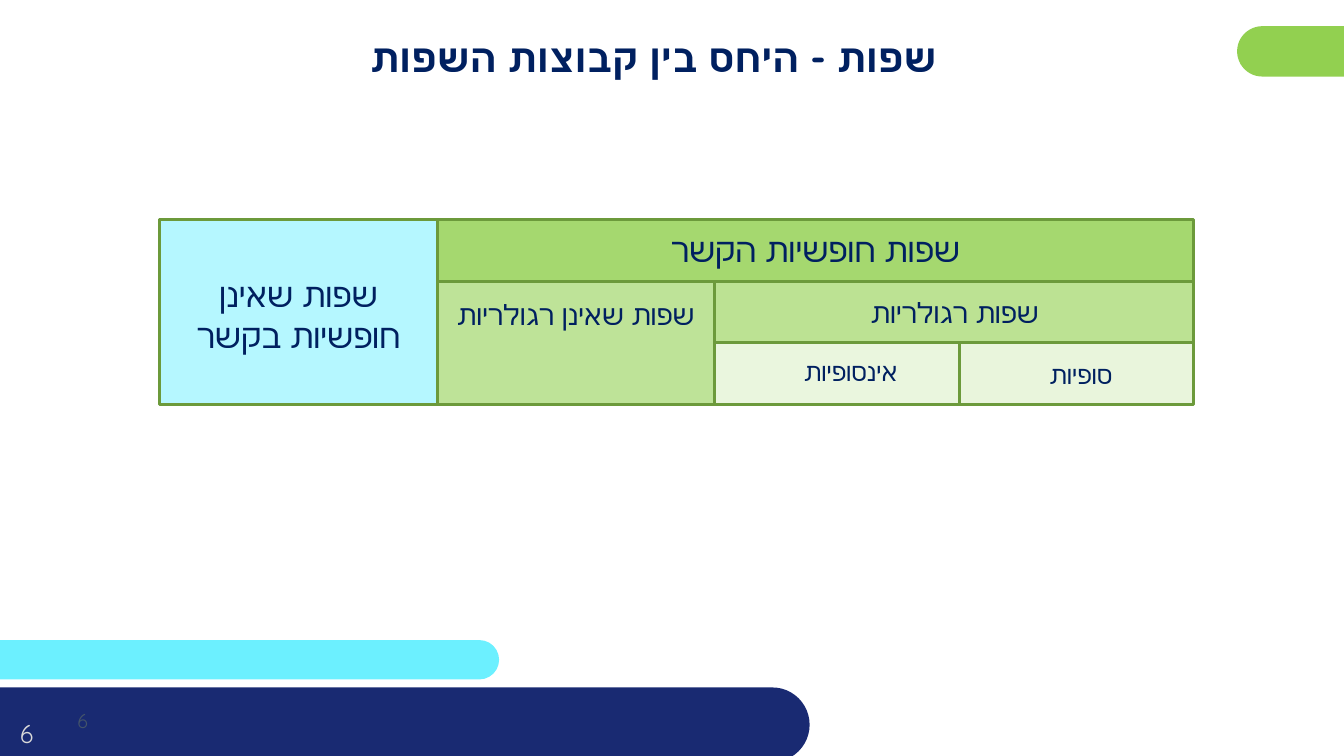
"""Build a slide showing how the groups of formal languages contain each other."""
from lxml import etree
from pptx import Presentation
from pptx.dml.color import RGBColor
from pptx.enum.shapes import MSO_SHAPE
from pptx.enum.text import MSO_ANCHOR, MSO_AUTO_SIZE, PP_ALIGN
from pptx.oxml.ns import qn
from pptx.util import Inches, Pt

LEFT, CENTER, RIGHT = PP_ALIGN.LEFT, PP_ALIGN.CENTER, PP_ALIGN.RIGHT
TOP, MIDDLE = MSO_ANCHOR.TOP, MSO_ANCHOR.MIDDLE
GROW, FIXED = MSO_AUTO_SIZE.SHAPE_TO_FIT_TEXT, MSO_AUTO_SIZE.NONE
RECTANGLE, PILL = MSO_SHAPE.RECTANGLE, MSO_SHAPE.ROUNDED_RECTANGLE

FONT = "Quicksand"
COLORS = {"green": "92D050", "cyan": "6CF0FF", "navy": "192A72", "border": "6C9A3B",
          "ink": "002060", "slate": "44546A", "pale": "D9D9D9"}

TITLE = "שפות - היחס בין קבוצות השפות"
BARS = [((-0.26, 6.35, 5.21, 0.39), "cyan"),
        ((12.27, 0.26, 1.87, 0.5), "green"),
        ((-0.42, 6.82, 8.45, 0.74), "navy")]
PAGE_NUMBERS = [((-0.18, 6.99, 0.89, 0.57), 18, "pale", CENTER),
                ((0.67, 6.95, 2.17, 0.4), 14, "slate", LEFT)]

COLUMN_EDGES = [1.58, 4.34, 7.09, 9.52, 11.84]
GRID_TOP, ROW_HEIGHT = 2.18, 0.61

# Each group: text, (column, row, columns, rows), colour, opacity, label box in the cell, size, align, wrap
GROUPS = [
    ("שפות רגולריות", (2, 1, 2, 1), "green", 61, (1.37, 0.09, 1.94, 0.44), 20, RIGHT, False),
    ("סופיות", (3, 2, 1, 1), "green", 20, (0.71, 0.12, 0.9, 0.4), 18, RIGHT, False),
    ("אינסופיות", (2, 2, 1, 1), "green", 19, (0.69, 0.09, 1.22, 0.4), 18, RIGHT, False),
    ("שפות חופשיות הקשר", (1, 0, 3, 1), "green", 82, (2.01, 0.04, 3.27, 0.5), 24, RIGHT, False),
    ("שפות שאינן רגולריות", (1, 1, 1, 2), "green", 59, (-0.02, 0.11, 2.78, 0.44), 20, CENTER, True),
    ("שפות שאינן\vחופשיות בקשר", (0, 0, 1, 3), "cyan", 50, (0.19, 0.49, 2.38, 0.91), 24, CENTER, False),
]


def color(name):
    return RGBColor.from_string(COLORS[name])


def write(holder, text, size, ink="ink", align=CENTER, anchor=TOP, bold=False,
          rtl=True, wrap=True, autosize=FIXED):
    frame = holder.text_frame
    frame.word_wrap, frame.auto_size, frame.vertical_anchor = wrap, autosize, anchor
    paragraph = frame.paragraphs[0]
    paragraph.text = text
    paragraph.alignment = align
    if rtl:
        paragraph._p.get_or_add_pPr().set("rtl", "1")
    for run in paragraph.runs:
        run.font.name, run.font.size, run.font.bold = FONT, Pt(size), bold
        run.font.color.rgb = color(ink)
        etree.SubElement(run.font._element, qn("a:cs"), typeface=FONT)


def add_block(slide, kind, box, fill, opacity=100, border=None):
    block = slide.shapes.add_shape(kind, *map(Inches, box))
    block.shadow.inherit = False
    block.fill.solid()
    block.fill.fore_color.rgb = color(fill)
    if opacity < 100:
        tint = block.element.spPr.find(qn("a:solidFill")).find(qn("a:srgbClr"))
        etree.SubElement(tint, qn("a:alpha"), val=str(opacity * 1000))
    if border:
        block.line.color.rgb = color(border)
        block.line.width = Pt(2)
    else:
        block.line.fill.background()
    return block


def cell_box(column, row, columns, rows):
    left = COLUMN_EDGES[column]
    return (left, GRID_TOP + row * ROW_HEIGHT,
            COLUMN_EDGES[column + columns] - left, rows * ROW_HEIGHT)


def main():
    deck = Presentation()
    deck.slide_width, deck.slide_height = Inches(13.33), Inches(7.5)
    slide = deck.slides.add_slide(deck.slide_layouts[5])

    for box, fill in BARS:
        add_block(slide, PILL, box, fill).adjustments[0] = 0.5

    title = slide.shapes.title
    title.left, title.top, title.width, title.height = map(Inches, (1.12, 0.17, 10.72, 0.79))
    write(title, TITLE, 28, anchor=MIDDLE, bold=True)
    title.text_frame.margin_left = title.text_frame.margin_right = Inches(0.04)
    title.text_frame.margin_top = title.text_frame.margin_bottom = 0

    for box, size, ink, align in PAGE_NUMBERS:
        number = slide.shapes.add_textbox(*map(Inches, box))
        write(number, "6", size, ink=ink, align=align, anchor=MIDDLE, rtl=False)

    for _, span, fill, opacity, *_ in GROUPS:
        add_block(slide, RECTANGLE, cell_box(*span), fill, opacity, "border")

    for text, span, _, _, (inset, drop, width, height), size, align, wrap in GROUPS:
        left, top, _, _ = cell_box(*span)
        label = slide.shapes.add_textbox(*map(Inches, (left + inset, top + drop, width, height)))
        write(label, text, size, align=align, wrap=wrap, autosize=GROW)

    deck.save("out.pptx")


if __name__ == "__main__":
    main()
